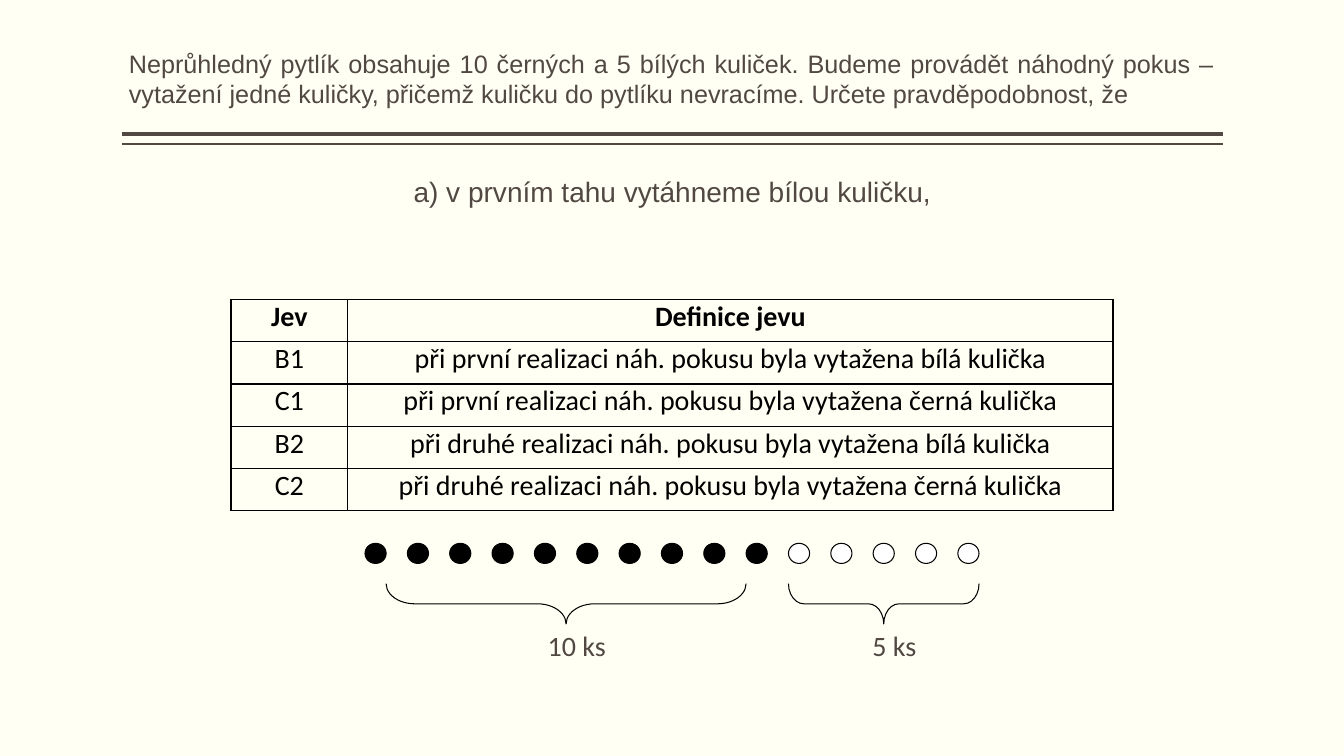
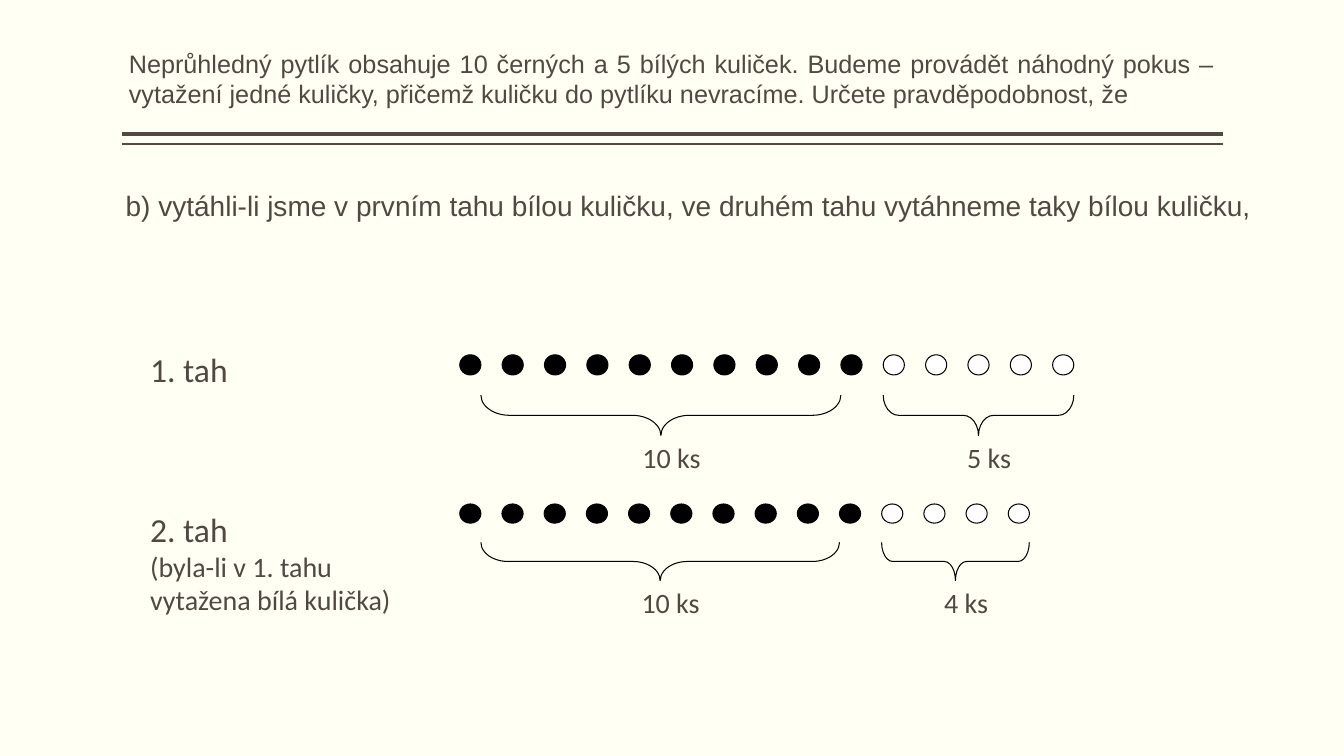
"""Build two slides about drawing black and white balls from a bag."""
from dataclasses import dataclass

from lxml.etree import SubElement
from pptx import Presentation
from pptx.dml.color import RGBColor
from pptx.enum.shapes import MSO_CONNECTOR, MSO_SHAPE
from pptx.enum.text import PP_ALIGN
from pptx.oxml.ns import qn
from pptx.util import Inches, Pt


@dataclass(frozen=True)
class Theme:
    paper: str = "FFFFF3"
    ink: str = "514843"
    black: str = "000000"
    white: str = "FFFFFF"
    head: str = "Arial"
    body: str = "Calibri"
    intro: int = 18
    text: int = 20
    large: int = 24
    thin: float = 0.75
    rule: int = 1
    bold: int = 3


THEME = Theme()
INTRO = ("Neprůhledný pytlík obsahuje 10 černých a 5 bílých kuliček. Budeme provádět "
         "náhodný pokus – vytažení jedné kuličky, přičemž kuličku do pytlíku nevracíme. "
         "Určete pravděpodobnost, že")
EVENTS = [
    ("Jev", "Definice jevu"),
    ("B1", "při první realizaci náh. pokusu byla vytažena bílá kulička"),
    ("C1", "při první realizaci náh. pokusu byla vytažena černá kulička"),
    ("B2", "při druhé realizaci náh. pokusu byla vytažena bílá kulička"),
    ("C2", "při druhé realizaci náh. pokusu byla vytažena černá kulička"),
]
COLS = (1.16, 7.59)
ROW = 0.42
BALL = 0.21
SLIDES = [
    {
        "task": "a) v prvním tahu vytáhneme bílou kuličku,",
        "box": (2.17, 1.72, 9, 0.5),
        "table": (2.29, 2.97),
        "draws": [{"first": 3.62, "last": 9.5, "top": 5.39, "unit": 0.4,
                   "parts": [(10, 3, 0.71), (5, 10.5, 0.38)]}],
        "notes": [],
    },
    {
        "task": "b) vytáhli-li jsme v prvním tahu bílou kuličku, "
                "ve druhém tahu vytáhneme taky bílou kuličku,",
        "box": (1.04, 1.86, 11.58, 0.5),
        "table": None,
        "draws": [{"first": 4.56, "last": 10.44, "top": 3.52, "unit": 0.4,
                   "parts": [(10, 3, 0.71), (5, 10.5, 0.38)]},
                  {"first": 4.56, "last": 10, "top": 5, "unit": 0.38,
                   "parts": [(10, 3, 0.71), (4, 10, 0.29)]}],
        "notes": [((1.39, 3.41, 1.48, 0.51), [("1. tah", THEME.large)]),
                  ((1.39, 5, 2.7, 1.18),
                   [("2. tah", THEME.large),
                    ("(byla-li v 1. tahu vytažena bílá kulička)", THEME.text)])],
    },
]


def rgb(code):
    return RGBColor.from_string(code)


def place(box):
    return [Inches(side) for side in box]


def write(para, text, size, font, color=THEME.ink, bold=False):
    run = para.add_run()
    run.text = text
    run.font.size, run.font.name, run.font.bold = Pt(size), font, bold
    run.font.color.rgb = rgb(color)


def label(shapes, box, lines, font=THEME.body, align=PP_ALIGN.LEFT):
    frame = shapes.add_textbox(*place(box)).text_frame
    frame.word_wrap = True
    for num, (text, size) in enumerate(lines):
        para = frame.add_paragraph() if num else frame.paragraphs[0]
        para.alignment = align
        write(para, text, size, font)
    return frame


def rules(shapes):
    for top, width in ((1.33, THEME.bold), (1.43, THEME.rule)):
        line = shapes.add_connector(MSO_CONNECTOR.STRAIGHT, *place((1.21, top, 12.13, top)))
        line.line.color.rgb, line.line.width = rgb(THEME.ink), Pt(width)
        SubElement(line._element.spPr, qn("a:effectLst"))


def outline(shapes, kind, box, fill=None):
    shape = shapes.add_shape(kind, *place(box))
    shape.shadow.inherit = False
    shape.line.color.rgb, shape.line.width = rgb(THEME.black), Pt(THEME.thin)
    if fill:
        shape.fill.solid()
        shape.fill.fore_color.rgb = rgb(fill)
    else:
        shape.fill.background()
    return shape


def brace(shapes, left, top, width, height, bend):
    mid, half = left + width / 2, top + height / 2
    box = (mid - height / 2, half - width / 2, height, width)
    shape = outline(shapes, MSO_SHAPE.LEFT_BRACE, box)
    shape.rotation = 270
    shape.adjustments[0] = bend


def draw(shapes, first, last, top, unit, parts):
    (dark, *_), (light, *_) = parts
    step = (last - first) / (dark + light - 1)
    for num in range(dark + light):
        fill = THEME.black if num < dark else THEME.white
        outline(shapes, MSO_SHAPE.OVAL, (first + num * step, top, BALL, unit / 2), fill)
    starts = (0.5, dark)
    spans = (dark - 1.5, light - 0.5)
    for (count, shift, bend), start, span in zip(parts, starts, spans):
        brace(shapes, first + start * step, top + unit, span * step, unit, bend)
        box = (first + shift * step, top + 2 * unit, 4 * step, 1.5 * unit)
        label(shapes, box, [(f"{count} ks", THEME.text)], align=PP_ALIGN.CENTER)


def border(cell):
    props = cell._tc.get_or_add_tcPr()
    for side in ("lnL", "lnR", "lnT", "lnB"):
        line = SubElement(props, qn(f"a:{side}"), w=str(Pt(THEME.rule)))
        fill = SubElement(line, qn("a:solidFill"))
        SubElement(fill, qn("a:srgbClr"), val=THEME.black)


def grid(shapes, left, top):
    box = (left, top, sum(COLS), ROW * len(EVENTS))
    table = shapes.add_table(len(EVENTS), len(COLS), *place(box)).table
    table.first_row = table.horz_banding = False
    for col, width in zip(table.columns, COLS):
        col.width = Inches(width)
    for num, (row, texts) in enumerate(zip(table.rows, EVENTS)):
        row.height = Inches(ROW)
        for cell, text in zip(row.cells, texts):
            border(cell)
            cell.fill.background()
            cell.margin_left = cell.margin_right = Inches(0.07)
            cell.margin_top = cell.margin_bottom = 0
            para = cell.text_frame.paragraphs[0]
            para.alignment = PP_ALIGN.CENTER
            write(para, text, THEME.text, THEME.body, THEME.black, num == 0)


def build(deck, data):
    shapes = deck.slides.add_slide(deck.slide_layouts[6]).shapes
    rules(shapes)
    label(shapes, (1.18, 0.43, 10.96, 0.71), [(INTRO, THEME.intro)],
          THEME.head, PP_ALIGN.JUSTIFY)
    task = label(shapes, data["box"], [(data["task"], THEME.text)],
                 THEME.head, PP_ALIGN.CENTER)
    task.margin_left = task.margin_right = 0
    task.paragraphs[0].line_spacing = 0.9
    if data["table"]:
        grid(shapes, *data["table"])
    for row in data["draws"]:
        draw(shapes.add_group_shape().shapes, **row)
    for box, lines in data["notes"]:
        label(shapes, box, lines)


def main():
    deck = Presentation()
    deck.slide_width, deck.slide_height = Inches(13.33), Inches(7.5)
    back = deck.slide_master.background.fill
    back.solid()
    back.fore_color.rgb = rgb(THEME.paper)
    for data in SLIDES:
        build(deck, data)
    deck.save("out.pptx")


if __name__ == "__main__":
    main()
